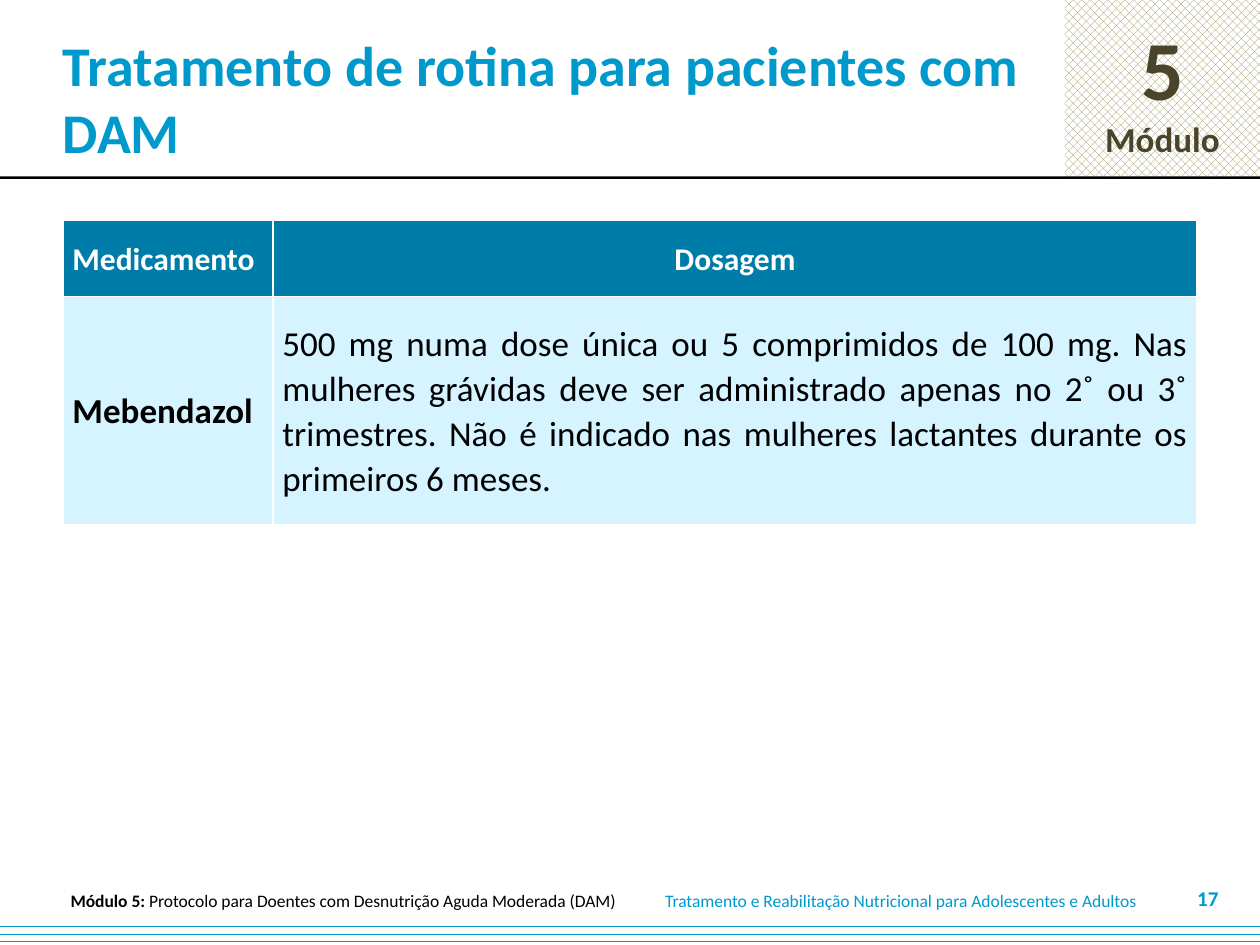
from lxml.etree import SubElement as Sub
from pptx import Presentation
from pptx.dml.color import RGBColor
from pptx.enum.dml import MSO_PATTERN as Pat
from pptx.enum.shapes import MSO_SHAPE as Form
from pptx.enum.text import MSO_ANCHOR as Anchor, PP_ALIGN as Align
from pptx.oxml.ns import qn
from pptx.util import Pt

FONT = "Calibri"
BLUE = RGBColor(0x00, 0x99, 0xCC)
DEEP = RGBColor(0x00, 0x7C, 0xA8)
PALE = RGBColor(0xD5, 0xF4, 0xFF)
SAND = RGBColor(0x94, 0x8A, 0x54)
BROWN = RGBColor(0x4A, 0x45, 0x2A)
BLACK = RGBColor(0, 0, 0)
WHITE = RGBColor(255, 255, 255)

WIDE, HIGH = 720, 540
HEAD = 100.8  # height of the header band
SIDE = 111.6  # width of the module badge

DOSE = ("500 mg numa dose única ou 5 comprimidos de 100 mg. Nas mulheres "
        "grávidas deve ser administrado apenas no 2˚ ou 3˚ trimestres. Não é "
        "indicado nas mulheres lactantes durante os primeiros 6 meses.")


def style(run, size, color, bold=False):
    font = run.font
    font.name, font.size, font.bold = FONT, Pt(size), bold
    font.color.rgb = color


def add_rect(slide, x, y, w, h):
    rect = slide.shapes.add_shape(Form.RECTANGLE, Pt(x), Pt(y), Pt(w), Pt(h))
    rect.shadow.inherit = False
    rect.line.fill.background()
    return rect


def hatch(shape, kind, color):
    fill = shape.fill
    fill.patterned()
    fill.pattern = kind
    fill.fore_color.rgb = color
    fill.back_color.rgb = WHITE


def add_text(slide, x, y, w, h, parts, align=Align.LEFT, wrap=True):
    """Place one line of text; parts holds (text, size, color, bold)."""
    box = slide.shapes.add_textbox(Pt(x), Pt(y), Pt(w), Pt(h))
    frame = box.text_frame
    frame.word_wrap = wrap
    frame.vertical_anchor = Anchor.MIDDLE
    para = frame.paragraphs[0]
    para.alignment = align
    for text, *look in parts:
        run = para.add_run()
        run.text = text
        style(run, *look)
    return frame


def add_header(slide, x, y, w, h):
    # Module badge
    badge = add_rect(slide, x + w - SIDE, y, SIDE, h)
    hatch(badge, Pat.PERCENT_50, SAND)
    frame = badge.text_frame
    frame.vertical_anchor = Anchor.MIDDLE
    frame.text = "5\nMódulo"
    for para, size in zip(frame.paragraphs, (48, 20)):
        para.alignment = Align.CENTER
        style(para.runs[0], size, BROWN, True)

    # Rule below the header
    rule = add_rect(slide, x - 1.4, y + h, w + 1.4, 1.5)
    rule.fill.solid()
    rule.fill.fore_color.rgb = BLACK

    # Title
    title = add_text(slide, x, y, 618, 111.6, [
        ("Tratamento de rotina para pacientes com DAM", 32, BLUE, True)])
    title.margin_left = Pt(36)


def edge(cell):
    """Draw thin white borders, which come before the fill in the XML."""
    props = cell._tc.get_or_add_tcPr()
    for i, side in enumerate(("lnL", "lnR", "lnT", "lnB")):
        line = Sub(props, qn("a:" + side), w=str(Pt(1)))
        fill = Sub(line, qn("a:solidFill"))
        Sub(fill, qn("a:srgbClr"), val=str(WHITE))
        props.insert(i, line)


def add_doses(slide, x, y, w, h):
    rows = [
        (43.5, DEEP, [("Medicamento", Align.JUSTIFY, 18, WHITE, True),
                      ("Dosagem", Align.CENTER, 18, WHITE, True)]),
        (h - 43.5, PALE, [("Mebendazol", Align.JUSTIFY, 20, BLACK, True),
                          (DOSE, Align.JUSTIFY, 20, BLACK, False)]),
    ]
    table = slide.shapes.add_table(2, 2, Pt(x), Pt(y), Pt(w), Pt(h)).table
    for col, size in zip(table.columns, (120, w - 120)):
        col.width = Pt(size)
    for row, (tall, color, items) in zip(table.rows, rows):
        row.height = Pt(tall)
        for cell, (text, align, *look) in zip(row.cells, items):
            cell.fill.solid()
            cell.fill.fore_color.rgb = color
            cell.vertical_anchor = Anchor.MIDDLE
            cell.margin_left = cell.margin_right = Pt(5.4)
            cell.margin_top = cell.margin_bottom = 0
            cell.text_frame.text = text
            para = cell.text_frame.paragraphs[0]
            para.alignment, para.line_spacing = align, 1.05
            style(para.runs[0], *look)
            edge(cell)


def add_footer(slide, x, y, w, h):
    # Striped band
    band = add_rect(slide, x, y + h - 15, w, 15)
    hatch(band, Pat.DASHED_HORIZONTAL, BLUE)

    # Course, module and page number
    add_text(slide, x + 373, y + 3.6, 291.6, 14.4, [
        ("Tratamento e Reabilitação Nutricional para Adolescentes e Adultos",
         10, BLUE)], wrap=False)
    add_text(slide, x + 21, y + 3.6, 350, 14.4, [
        ("Módulo 5: ", 10, BLACK, True),
        ("Protocolo para Doentes com Desnutrição Aguda Moderada (DAM)",
         10, BLACK)], Align.CENTER, wrap=False)
    add_text(slide, x + 667.4, y, 36, 18, [("17", 12, BLUE, True)],
             Align.RIGHT)


def main():
    deck = Presentation()
    deck.slide_width, deck.slide_height = Pt(WIDE), Pt(HIGH)
    slide = deck.slides.add_slide(deck.slide_layouts[6])
    add_header(slide, 0, 0, WIDE, HEAD)
    add_footer(slide, 0, 504, WIDE, 36)
    add_doses(slide, 36, 126, 648, 174)
    deck.save("out.pptx")


if __name__ == "__main__":
    main()
